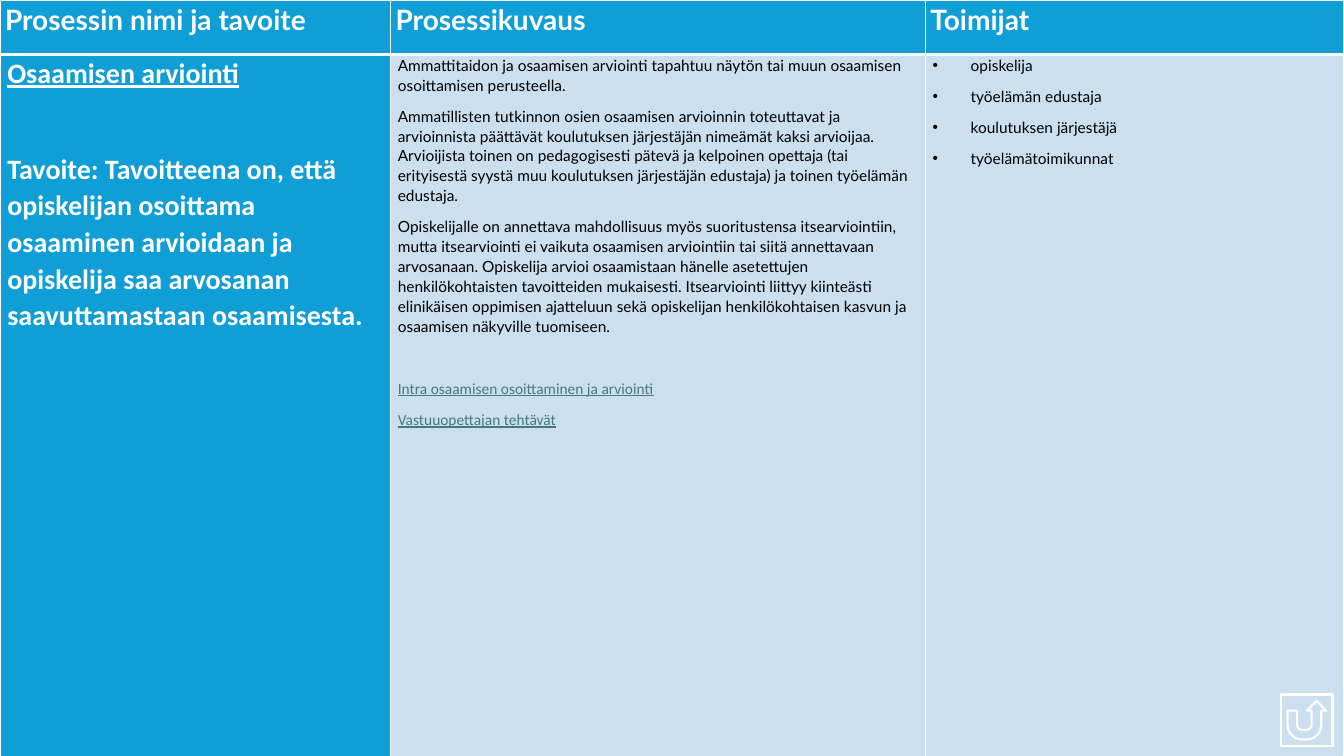
from dataclasses import dataclass

from lxml.etree import SubElement
from pptx import Presentation
from pptx.dml.color import RGBColor
from pptx.enum.shapes import MSO_SHAPE as Preset
from pptx.oxml import parse_xml
from pptx.oxml.ns import nsdecls, qn
from pptx.slide import Slide
from pptx.table import _Cell as Cell
from pptx.text.text import _Paragraph as Paragraph
from pptx.util import Pt


@dataclass(frozen=True)
class Theme:
    blue: str = "0F9ED5"
    pale: str = "CCDFEF"
    white: str = "FFFFFF"
    black: str = "000000"
    link: str = "467886"
    heading_size: float = 20
    body_size: float = 11
    heading_font: str = "Lato"
    plain_font: str = "Calibri"
    line_spacing: float = 1.07
    gap: float = 8
    thin: float = 1
    thick: float = 3


THEME = Theme()


@dataclass(frozen=True)
class TextStyle:
    font: str
    size: float
    color: str
    bold: bool = False
    underline: bool = False
    bullet: bool = False


@dataclass(frozen=True)
class TextItem:
    text: str
    style: TextStyle
    gap: float = THEME.gap


@dataclass(frozen=True)
class CellContent:
    items: list[TextItem]
    fill: str
    margin: float
    top_border: float
    bottom_border: float


HEADER = TextStyle(THEME.heading_font, THEME.heading_size, THEME.white, bold=True)
GOAL = TextStyle(THEME.plain_font, THEME.heading_size, THEME.white, bold=True)
PROCESS = TextStyle(THEME.plain_font, THEME.heading_size, THEME.white, bold=True, underline=True)
BODY = TextStyle(THEME.heading_font, THEME.body_size, THEME.black)
LINK = TextStyle(THEME.plain_font, THEME.body_size, THEME.link, underline=True)
ACTOR = TextStyle(THEME.heading_font, THEME.body_size, THEME.black, bullet=True)

COLUMN_WIDTHS = [279, 382, 299]
ROW_HEIGHTS = [39, 539]
BULLET_INDENT = 27.2

HEADINGS = ["Prosessin nimi ja tavoite", "Prosessikuvaus", "Toimijat"]
GOAL_ITEMS = [
    TextItem("Osaamisen arviointi", PROCESS, gap=42),
    TextItem(
        "Tavoite: Tavoitteena on, että opiskelijan osoittama osaaminen arvioidaan ja "
        "opiskelija saa arvosanan saavuttamastaan osaamisesta.", GOAL),
]
DESCRIPTION_ITEMS = [
    TextItem(
        "Ammattitaidon ja osaamisen arviointi tapahtuu näytön tai muun osaamisen "
        "osoittamisen perusteella.", BODY),
    TextItem(
        "Ammatillisten tutkinnon osien osaamisen arvioinnin toteuttavat ja arvioinnista "
        "päättävät koulutuksen järjestäjän nimeämät kaksi arvioijaa. Arvioijista toinen on "
        "pedagogisesti pätevä ja kelpoinen opettaja (tai erityisestä syystä muu koulutuksen "
        "järjestäjän edustaja) ja toinen työelämän edustaja.", BODY),
    TextItem(
        "Opiskelijalle on annettava mahdollisuus myös suoritustensa itsearviointiin, mutta "
        "itsearviointi ei vaikuta osaamisen arviointiin tai siitä annettavaan arvosanaan. "
        "Opiskelija arvioi osaamistaan hänelle asetettujen henkilökohtaisten tavoitteiden "
        "mukaisesti. Itsearviointi liittyy kiinteästi elinikäisen oppimisen ajatteluun sekä "
        "opiskelijan henkilökohtaisen kasvun ja osaamisen näkyville tuomiseen.", BODY, gap=30),
    TextItem("Intra osaamisen osoittaminen ja arviointi", LINK),
    TextItem("Vastuuopettajan tehtävät", LINK),
]
ACTOR_ITEMS = [
    TextItem(actor, ACTOR)
    for actor in ["opiskelija", "työelämän edustaja", "koulutuksen järjestäjä", "työelämätoimikunnat"]
]

HEADER_ROW = [
    CellContent([TextItem(heading, HEADER)], THEME.blue, 3.6, THEME.thin, THEME.thick)
    for heading in HEADINGS
]
CONTENT_ROW = [
    CellContent(items, fill, 5.2, THEME.thick, THEME.thin)
    for items, fill in [
        (GOAL_ITEMS, THEME.blue), (DESCRIPTION_ITEMS, THEME.pale), (ACTOR_ITEMS, THEME.pale)]
]


def add_bullet(paragraph: Paragraph) -> None:
    properties = paragraph._p.get_or_add_pPr()
    properties.set("marL", str(Pt(BULLET_INDENT)))
    properties.set("indent", str(-Pt(BULLET_INDENT)))
    SubElement(properties, qn("a:buFont")).set("typeface", "Arial")
    SubElement(properties, qn("a:buChar")).set("char", "•")


def write_item(paragraph: Paragraph, item: TextItem) -> None:
    style = item.style
    paragraph.text = item.text
    paragraph.line_spacing = THEME.line_spacing
    paragraph.space_after = Pt(item.gap)
    if style.bullet:
        add_bullet(paragraph)
    font = paragraph.font
    font.name = style.font
    font.size = Pt(style.size)
    font.bold = style.bold
    font.underline = style.underline
    font.color.rgb = RGBColor.from_string(style.color)


def set_borders(cell: Cell, top: float, bottom: float) -> None:
    properties = cell._tc.get_or_add_tcPr()
    widths = {"lnL": THEME.thin, "lnR": THEME.thin, "lnT": top, "lnB": bottom}
    for index, (side, width) in enumerate(widths.items()):
        properties.insert(index, parse_xml(
            f'<a:{side} {nsdecls("a")} w="{Pt(width)}"><a:solidFill>'
            f'<a:srgbClr val="{THEME.white}"/></a:solidFill></a:{side}>'))


def fill_cell(cell: Cell, content: CellContent) -> None:
    cell.margin_left = cell.margin_right = Pt(content.margin)
    cell.margin_top = cell.margin_bottom = 0
    cell.fill.solid()
    cell.fill.fore_color.rgb = RGBColor.from_string(content.fill)
    set_borders(cell, content.top_border, content.bottom_border)
    frame = cell.text_frame
    for index, item in enumerate(content.items):
        write_item(frame.add_paragraph() if index else frame.paragraphs[0], item)


def add_process_table(slide: Slide) -> None:
    table = slide.shapes.add_table(
        len(ROW_HEIGHTS), len(COLUMN_WIDTHS), 0, 0,
        Pt(sum(COLUMN_WIDTHS)), Pt(sum(ROW_HEIGHTS))).table
    table.first_row = table.horz_banding = False
    for column, width in zip(table.columns, COLUMN_WIDTHS):
        column.width = Pt(width)
    for row, height, contents in zip(table.rows, ROW_HEIGHTS, [HEADER_ROW, CONTENT_ROW]):
        row.height = Pt(height)
        for cell, content in zip(row.cells, contents):
            fill_cell(cell, content)


def add_return_button(slide: Slide) -> None:
    button = slide.shapes.add_shape(
        Preset.ACTION_BUTTON_RETURN, Pt(915.1), Pt(496.1), Pt(36.7), Pt(36.7))
    button.shadow.inherit = False
    button.fill.background()
    button.line.color.rgb = RGBColor.from_string(THEME.white)
    button.line.width = Pt(1.5)


def main() -> None:
    presentation = Presentation()
    presentation.slide_width = Pt(960)
    presentation.slide_height = Pt(540)
    slide = presentation.slides.add_slide(presentation.slide_layouts.get_by_name("Blank"))
    add_process_table(slide)
    add_return_button(slide)
    presentation.save("out.pptx")


if __name__ == "__main__":
    main()
